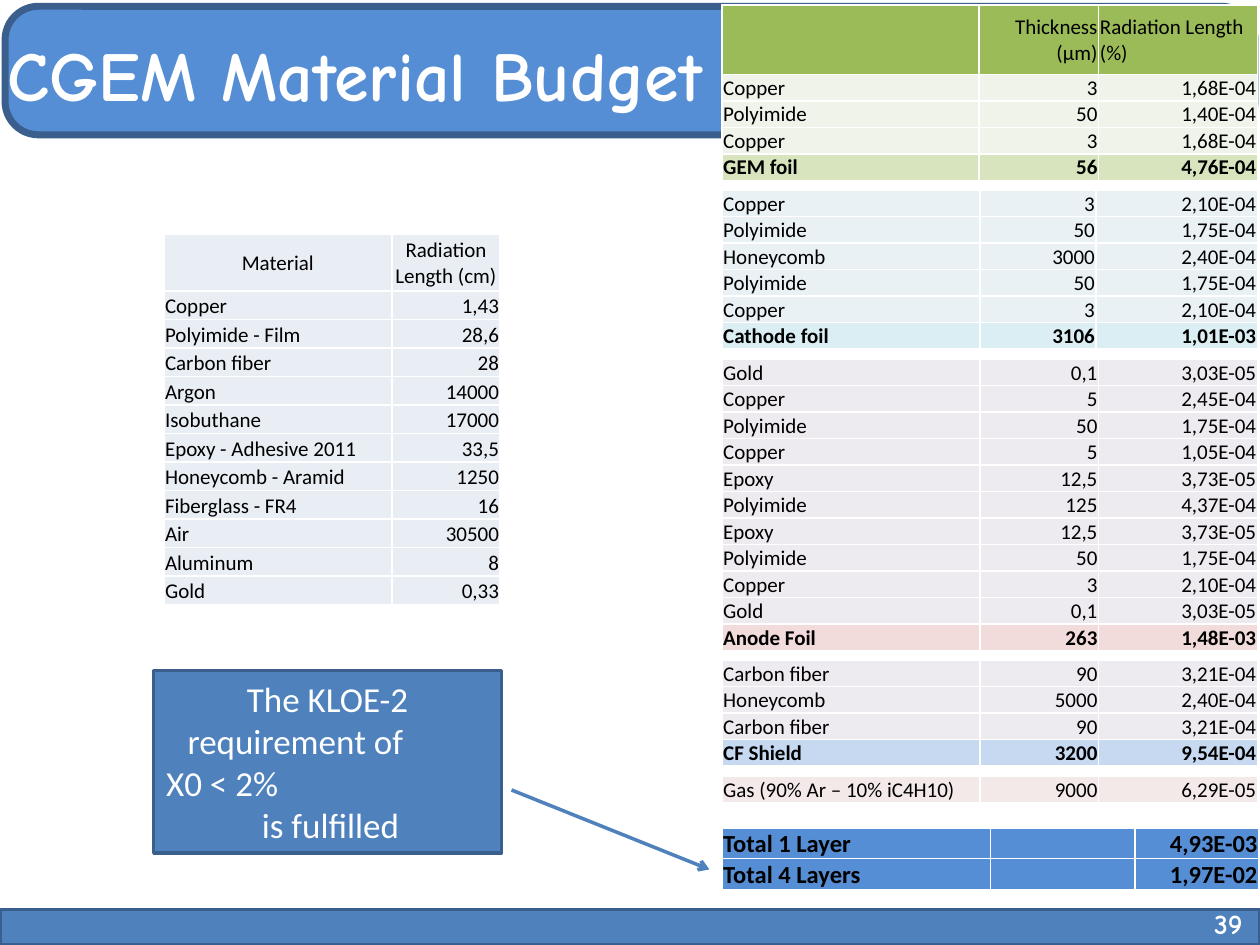
from dataclasses import dataclass
from typing import Optional

import pptx
import pptx.dml.color
import pptx.enum.shapes
import pptx.enum.text
import pptx.oxml
import pptx.oxml.ns
import pptx.util
from lxml import etree

RGBColor = pptx.dml.color.RGBColor
Align = pptx.enum.text.PP_ALIGN
Anchor = pptx.enum.text.MSO_ANCHOR
Preset = pptx.enum.shapes.MSO_SHAPE
qn = pptx.oxml.ns.qn

WHITE = RGBColor(0xFF, 0xFF, 0xFF)
BLACK = RGBColor(0x00, 0x00, 0x00)
BLUE = RGBColor(0x4F, 0x81, 0xBD)
DARK_BLUE = RGBColor(0x3A, 0x5F, 0x8C)
BRIGHT_BLUE = RGBColor(0x55, 0x8E, 0xD5)
ICE = RGBColor(0xE9, 0xED, 0xF4)
GREEN = RGBColor(0x9B, 0xBB, 0x59)
PALE_GREEN = RGBColor(0xEF, 0xF3, 0xEA)
LIGHT_GREEN = RGBColor(0xD7, 0xE4, 0xBD)
PALE_AQUA = RGBColor(0xE9, 0xF1, 0xF5)
AQUA = RGBColor(0xDB, 0xEE, 0xF4)
LILAC = RGBColor(0xED, 0xEA, 0xF0)
ROSE = RGBColor(0xF2, 0xDC, 0xDB)
SKY = RGBColor(0xC6, 0xD9, 0xF1)
PALE_ROSE = RGBColor(0xF4, 0xE9, 0xE9)

# The slide is a grid of 100 columns by 75 rows of square units.
COLUMNS, ROWS = 100, 75
BODY_FONT, TITLE_FONT = "Calibri", "Comic Neue"
BUDGET_LEFT, BUDGET_TOP, BUDGET_GAP = 57.3, 0.4, 0.8
LAYER_WIDTHS = (20.5, 9.4, 12.6)


@dataclass
class MaterialTable:
    widths: tuple
    rows: list
    fill: RGBColor
    row_height: float = 2.1
    header: Optional[tuple] = None
    header_aligns: tuple = ()
    header_height: float = 0
    header_fill: Optional[RGBColor] = None
    total_fill: Optional[RGBColor] = None
    size: int = 12

    @property
    def height(self) -> float:
        return self.header_height + self.row_height * len(self.rows)


PROPERTIES = MaterialTable(
    (18.1, 8.6),
    [("Copper", "1,43"), ("Polyimide - Film", "28,6"), ("Carbon fiber", "28"),
     ("Argon", "14000"), ("Isobuthane", "17000"), ("Epoxy - Adhesive 2011", "33,5"),
     ("Honeycomb - Aramid", "1250"), ("Fiberglass - FR4", "16"), ("Air", "30500"),
     ("Aluminum", "8"), ("Gold", "0,33")],
    ICE, row_height=2.26, header=("Material", "Radiation Length (cm)"),
    header_aligns=(Align.CENTER, Align.CENTER), header_height=4.5, header_fill=ICE)

BUDGET = [
    MaterialTable(
        (20.4, 9.5, 12.6),
        [("Copper", "3", "1,68E-04"), ("Polyimide", "50", "1,40E-04"),
         ("Copper", "3", "1,68E-04"), ("GEM foil", "56", "4,76E-04")],
        PALE_GREEN, header=("", "Thickness (µm)", "Radiation Length (%)"),
        header_aligns=(Align.LEFT, Align.RIGHT, Align.LEFT), header_height=5.5,
        header_fill=GREEN, total_fill=LIGHT_GREEN),
    MaterialTable(
        (20.5, 9.2, 12.8),
        [("Copper", "3", "2,10E-04"), ("Polyimide", "50", "1,75E-04"),
         ("Honeycomb", "3000", "2,40E-04"), ("Polyimide", "50", "1,75E-04"),
         ("Copper", "3", "2,10E-04"), ("Cathode foil", "3106", "1,01E-03")],
        PALE_AQUA, total_fill=AQUA),
    MaterialTable(
        LAYER_WIDTHS,
        [("Gold", "0,1", "3,03E-05"), ("Copper", "5", "2,45E-04"),
         ("Polyimide", "50", "1,75E-04"), ("Copper", "5", "1,05E-04"),
         ("Epoxy", "12,5", "3,73E-05"), ("Polyimide", "125", "4,37E-04"),
         ("Epoxy", "12,5", "3,73E-05"), ("Polyimide", "50", "1,75E-04"),
         ("Copper", "3", "2,10E-04"), ("Gold", "0,1", "3,03E-05"),
         ("Anode Foil", "263", "1,48E-03")],
        LILAC, total_fill=ROSE),
    MaterialTable(
        LAYER_WIDTHS,
        [("Carbon fiber", "90", "3,21E-04"), ("Honeycomb", "5000", "2,40E-04"),
         ("Carbon fiber", "90", "3,21E-04"), ("CF Shield", "3200", "9,54E-04")],
        LILAC, total_fill=SKY),
    MaterialTable(LAYER_WIDTHS, [("Gas (90% Ar – 10% iC4H10)", "9000", "6,29E-05")], PALE_ROSE),
]

TOTALS = MaterialTable(
    (21.3, 11.5, 9.8), [("Total 1 Layer", "", "4,93E-03"), ("Total 4 Layers", "", "1,97E-02")],
    BRIGHT_BLUE, row_height=2.45, header_fill=BRIGHT_BLUE, size=14)


def units(count: float) -> pptx.util.Length:
    return pptx.util.Inches(count * 10 / COLUMNS)


def format_runs(para, size: int, color: RGBColor, font: str = BODY_FONT, bold: bool = False) -> None:
    for span in para.runs:
        span.font.size = pptx.util.Pt(size)
        span.font.name = font
        span.font.bold = bold
        span.font.color.rgb = color


def add_panel(page, preset, left: float, top: float, width: float, height: float,
              fill: RGBColor, line_width: int):
    panel = page.shapes.add_shape(preset, *map(units, (left, top, width, height)))
    panel.shadow.inherit = False
    panel.fill.solid()
    panel.fill.fore_color.rgb = fill
    panel.line.color.rgb = DARK_BLUE
    panel.line.width = pptx.util.Pt(line_width)
    return panel


def add_white_borders(cell) -> None:
    properties = cell._tc.get_or_add_tcPr()
    for index, side in enumerate(("lnL", "lnR", "lnT", "lnB")):
        border = etree.Element(qn(f"a:{side}"), w=str(pptx.util.Pt(1)))
        fill = etree.SubElement(border, qn("a:solidFill"))
        etree.SubElement(fill, qn("a:srgbClr"), val=str(WHITE))
        properties.insert(index, border)


def fill_cell(cell, text: str, align, anchor, fill: RGBColor, size: int, bold: bool) -> None:
    cell.fill.solid()
    cell.fill.fore_color.rgb = fill
    add_white_borders(cell)
    cell.margin_left = cell.margin_right = cell.margin_top = units(0.1)
    cell.margin_bottom = 0
    cell.vertical_anchor = anchor
    para = cell.text_frame.paragraphs[0]
    para.alignment = align
    if text:
        para.text = text
        format_runs(para, size, BLACK, bold=bold)
    else:
        etree.SubElement(para._p, qn("a:endParaRPr"), sz=str(size * 100))


def add_material_table(page, left: float, top: float, data: MaterialTable) -> None:
    lines = ([data.header] if data.header else []) + data.rows
    table = page.shapes.add_table(
        len(lines), len(data.widths),
        *map(units, (left, top, sum(data.widths), data.height))).table
    table.first_row = table.horz_banding = False
    for column, width in zip(table.columns, data.widths):
        column.width = units(width)
    for i, line in enumerate(lines):
        is_header = line is data.header
        is_total = data.total_fill is not None and i == len(lines) - 1
        fill = data.header_fill if is_header else data.total_fill if is_total else data.fill
        table.rows[i].height = units(data.header_height if is_header else data.row_height)
        for j, text in enumerate(line):
            align = data.header_aligns[j] if is_header else Align.RIGHT if j else Align.LEFT
            anchor = Anchor.MIDDLE if is_header else Anchor.BOTTOM
            fill_cell(table.cell(i, j), text, align, anchor, fill, data.size,
                      is_total or data is TOTALS)


def add_title(page) -> None:
    banner = add_panel(page, Preset.ROUNDED_RECTANGLE, 0.4, 0.5, 99.2, 10.2, BRIGHT_BLUE, 4)
    banner.adjustments[0] = 0.26
    title = page.shapes.title
    title.left, title.top, title.width, title.height = map(units, (-0.4, 1.6, 100.8, 8.4))
    title.text_frame.text = "CGEM Material Budget"
    title.text_frame.vertical_anchor = Anchor.MIDDLE
    para = title.text_frame.paragraphs[0]
    para.alignment = Align.LEFT
    format_runs(para, 40, WHITE, TITLE_FONT, bold=True)
    banner.element.addnext(title.element)


def add_page_number(page) -> None:
    box = page.shapes.add_textbox(*map(units, (76.3, 71.3, 23.3, 4)))
    box.text_frame.word_wrap = True
    box.text_frame.vertical_anchor = Anchor.MIDDLE
    box.text_frame.text = "39"
    para = box.text_frame.paragraphs[0]
    para.alignment = Align.RIGHT
    format_runs(para, 16, WHITE, TITLE_FONT, bold=True)


def add_requirement(page) -> None:
    box = add_panel(page, Preset.RECTANGLE, 12.2, 53.2, 27.6, 14.5, BLUE, 2)
    box.text_frame.word_wrap = True
    box.text_frame.text = "The KLOE-2\nrequirement of\nX0 < 2%\nis fulfilled"
    for para, indent in zip(box.text_frame.paragraphs, (None, 1.7, 0, 7.6)):
        para.alignment = Align.CENTER if indent is None else Align.LEFT
        para._p.get_or_add_pPr().set("marL", str(units(indent or 0)))
        format_runs(para, 20, WHITE)


def add_arrow(page) -> None:
    arrow = page.shapes.add_connector(
        pptx.enum.shapes.MSO_CONNECTOR.STRAIGHT, *map(units, (40.6, 62.7, 56.3, 69)))
    arrow.line.color.rgb = BLUE
    arrow.line.width = pptx.util.Pt(2)
    etree.SubElement(arrow.line._get_or_add_ln(), qn("a:tailEnd"), type="arrow")
    etree.SubElement(arrow.element.spPr, qn("a:effectLst"))


def main() -> None:
    deck = pptx.Presentation()
    deck.slide_width, deck.slide_height = units(COLUMNS), units(ROWS)
    page = deck.slides.add_slide(deck.slide_layouts[5])
    add_panel(page, Preset.RECTANGLE, 0, 72.2, COLUMNS, 2.8, BLUE, 2)
    add_title(page)
    add_page_number(page)
    add_material_table(page, 13, 18.6, PROPERTIES)
    top = BUDGET_TOP
    for layer in BUDGET:
        add_material_table(page, BUDGET_LEFT, top, layer)
        top += layer.height + BUDGET_GAP
    add_material_table(page, BUDGET_LEFT, 65.7, TOTALS)
    add_requirement(page)
    add_arrow(page)
    deck.save("out.pptx")


if __name__ == "__main__":
    main()
